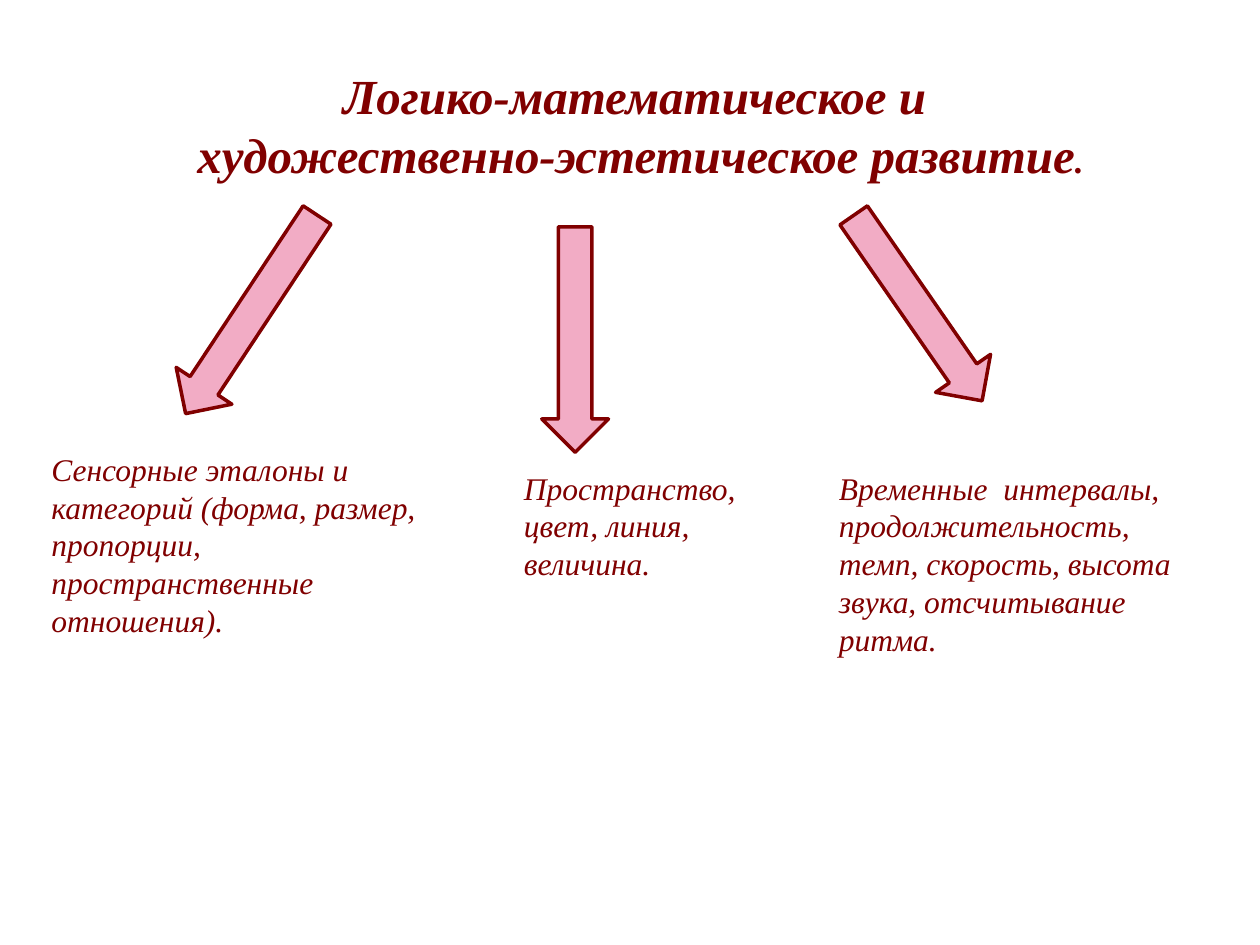
from pptx import Presentation
from pptx.dml.color import RGBColor
from pptx.enum.shapes import MSO_SHAPE
from pptx.enum.text import MSO_ANCHOR, MSO_AUTO_SIZE, PP_ALIGN
from pptx.util import Inches, Pt

MAROON = RGBColor(0x80, 0x00, 0x00)
PINK = RGBColor(0xF2, 0xAC, 0xC5)

SLIDE_WIDTH, SLIDE_HEIGHT = Inches(10), Inches(7.5)
COLUMN, ROW = SLIDE_WIDTH / 100, SLIDE_HEIGHT / 75

BODY_FORMAT = {"name": "Times New Roman", "size": Pt(18), "bold": False, "italic": True}
TITLE_FORMAT = {**BODY_FORMAT, "size": Pt(28), "bold": True}
TITLE_END_FORMAT = {**TITLE_FORMAT, "size": Pt(20)}

TITLE_LINES = [
    [("Логико-математическое и", TITLE_FORMAT)],
    [(" художественно-эстетическое развитие", TITLE_FORMAT), (".", TITLE_END_FORMAT)],
]
ARROWS = [
    ((17.3, 15.5, 5.3, 18.9), 33.5),
    ((43, 18, 5.3, 17.9), 0),
    ((70.2, 15.5, 5.3, 17.9), 325.3),
]
TOPICS = [
    ((3.1, 35.2, 31.2, 16.2),
     "Сенсорные эталоны и категорий (форма, размер, пропорции, пространственные отношения)."),
    ((40.6, 36.7, 19.5, 10.1), "Пространство, цвет, линия, величина."),
    ((65.6, 36.7, 28.9, 16.2),
     "Временные  интервалы, продолжительность, темп, скорость, высота звука, отсчитывание ритма."),
]


def grid_box(left, top, width, height):
    lengths = (left * COLUMN, top * ROW, width * COLUMN, height * ROW)
    return [round(length) for length in lengths]


def add_run(paragraph, text, font_format):
    run = paragraph.add_run()
    run.text = text
    for name, value in font_format.items():
        setattr(run.font, name, value)
    run.font.color.rgb = MAROON


def fill_title(title, area):
    title.left, title.top, title.width, title.height = grid_box(*area)
    frame = title.text_frame
    frame.word_wrap = True
    frame.auto_size = MSO_AUTO_SIZE.SHAPE_TO_FIT_TEXT
    frame.vertical_anchor = MSO_ANCHOR.TOP
    for index, line in enumerate(TITLE_LINES):
        paragraph = frame.add_paragraph() if index else frame.paragraphs[0]
        paragraph.alignment = PP_ALIGN.CENTER
        for text, font_format in line:
            add_run(paragraph, text, font_format)


def add_arrow(slide, area, rotation):
    arrow = slide.shapes.add_shape(MSO_SHAPE.DOWN_ARROW, *grid_box(*area))
    arrow.rotation = rotation
    arrow.shadow.inherit = False
    arrow.fill.solid()
    arrow.fill.fore_color.rgb = PINK
    arrow.line.color.rgb = MAROON
    arrow.line.width = Pt(2)


def add_topic(slide, area, text):
    frame = slide.shapes.add_textbox(*grid_box(*area)).text_frame
    frame.word_wrap = True
    frame.auto_size = MSO_AUTO_SIZE.SHAPE_TO_FIT_TEXT
    add_run(frame.paragraphs[0], text, BODY_FORMAT)


def main():
    presentation = Presentation()
    presentation.slide_width, presentation.slide_height = SLIDE_WIDTH, SLIDE_HEIGHT
    slide = presentation.slides.add_slide(presentation.slide_layouts[5])
    fill_title(slide.shapes.title, (6.2, 4.7, 88.3, 10.4))
    for area, rotation in ARROWS:
        add_arrow(slide, area, rotation)
    for area, text in TOPICS:
        add_topic(slide, area, text)
    presentation.save("out.pptx")


if __name__ == "__main__":
    main()
